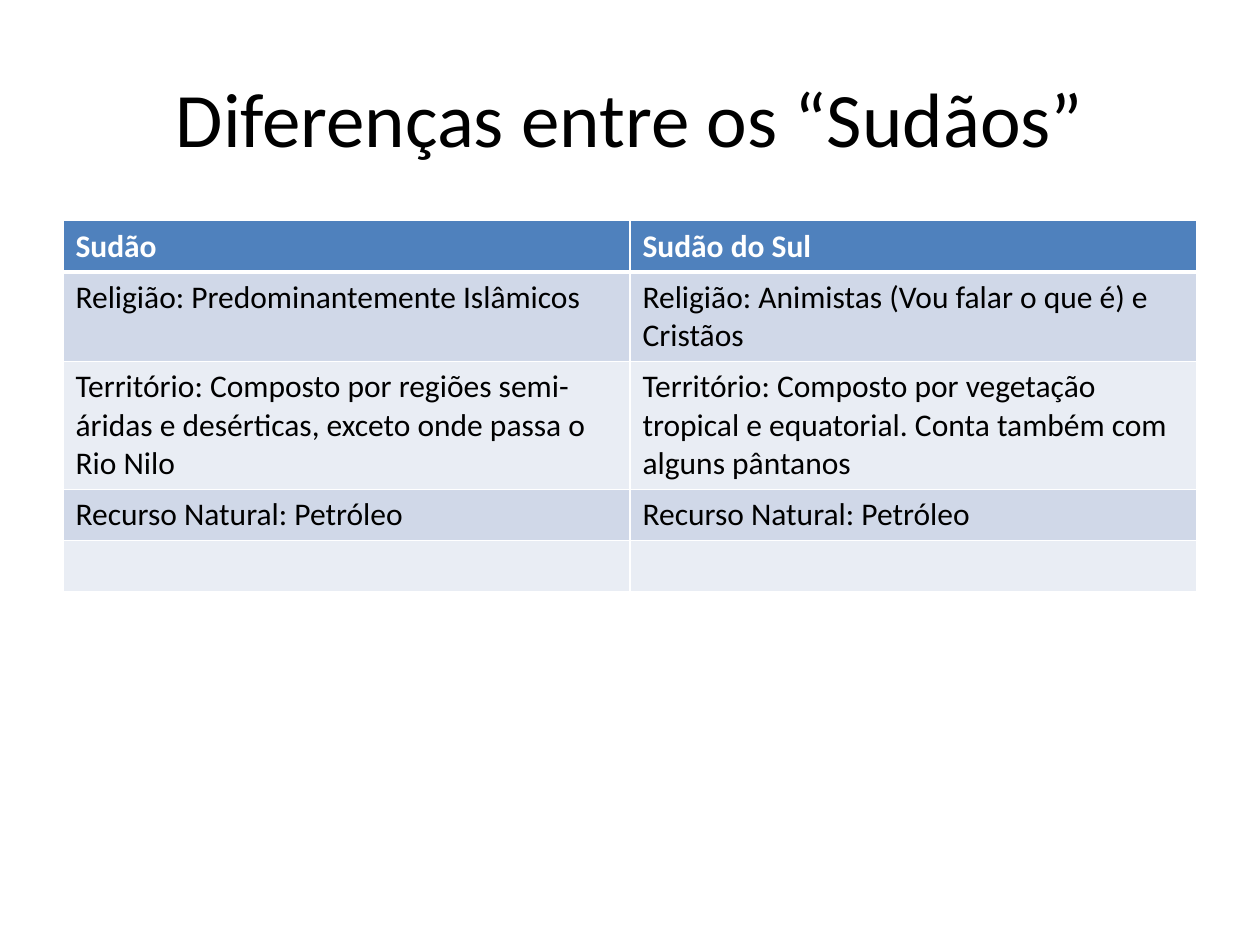
import pptx
import pptx.util
import pptx.dml.color
import pptx.enum.text
import pptx.oxml
import pptx.oxml.ns
from pptx.util import Cm

COLORS = {
    "text": "000000",
    "white": "FFFFFF",
    "header": "4F81BD",
    "odd_row": "D0D8E8",
    "even_row": "E9EDF4",
}
FONT = "Calibri"
ROWS = [
    ("Sudão", "Sudão do Sul"),
    ("Religião: Predominantemente Islâmicos",
     "Religião: Animistas (Vou falar o que é) e Cristãos"),
    ("Território: Composto por regiões semi-áridas e desérticas, exceto onde passa o Rio Nilo",
     "Território: Composto por vegetação tropical e equatorial. Conta também com alguns pântanos"),
    ("Recurso Natural: Petróleo", "Recurso Natural: Petróleo"),
    ("", ""),
]
ROW_HEIGHTS = [1.03, 1.78, 2.57, 1.03, 1.03]


def style_font(font, size, color, bold=False):
    font.name = FONT
    font.size = pptx.util.Pt(size)
    font.bold = bold
    font.color.rgb = pptx.dml.color.RGBColor.from_string(COLORS[color])


def set_borders(cell, widths):
    """Put white left, right, top and bottom lines before the cell's fill."""
    properties = cell._tc.get_or_add_tcPr()
    for index, (side, width) in enumerate(widths.items()):
        line = pptx.oxml.parse_xml(
            f'<a:{side} {pptx.oxml.ns.nsdecls("a")} w="{pptx.util.Pt(width)}">'
            f'<a:solidFill><a:srgbClr val="{COLORS["white"]}"/></a:solidFill></a:{side}>')
        properties.insert(index, line)


deck = pptx.Presentation()
deck.slide_width, deck.slide_height = Cm(25.4), Cm(19.05)
page = deck.slides.add_slide(deck.slide_layouts[5])

# Title
title = page.shapes.title
title.left, title.top, title.width, title.height = Cm(1.27), Cm(0.76), Cm(22.86), Cm(3.18)
title.text_frame.text = "Diferenças entre os “Sudãos”"
title.text_frame.vertical_anchor = pptx.enum.text.MSO_ANCHOR.MIDDLE
para = title.text_frame.paragraphs[0]
para.alignment = pptx.enum.text.PP_ALIGN.CENTER
style_font(para.runs[0].font, 44, "text")

# Comparison table
table = page.shapes.add_table(len(ROWS), 2, Cm(1.27), Cm(4.45),
                              Cm(22.86), Cm(sum(ROW_HEIGHTS))).table
for row, height in zip(table.rows, ROW_HEIGHTS):
    row.height = Cm(height)

for row_index, texts in enumerate(ROWS):
    is_header = row_index == 0
    fill = "header" if is_header else "odd_row" if row_index % 2 else "even_row"
    for column_index, text in enumerate(texts):
        cell = table.cell(row_index, column_index)
        cell.fill.solid()
        cell.fill.fore_color.rgb = pptx.dml.color.RGBColor.from_string(COLORS[fill])
        set_borders(cell, {"lnL": 1, "lnR": 1,
                           "lnT": 3 if row_index == 1 else 1,
                           "lnB": 3 if is_header else 1})
        if text:
            cell.text_frame.text = text
            style_font(cell.text_frame.paragraphs[0].runs[0].font, 18,
                       "white" if is_header else "text", is_header)

deck.save("out.pptx")
